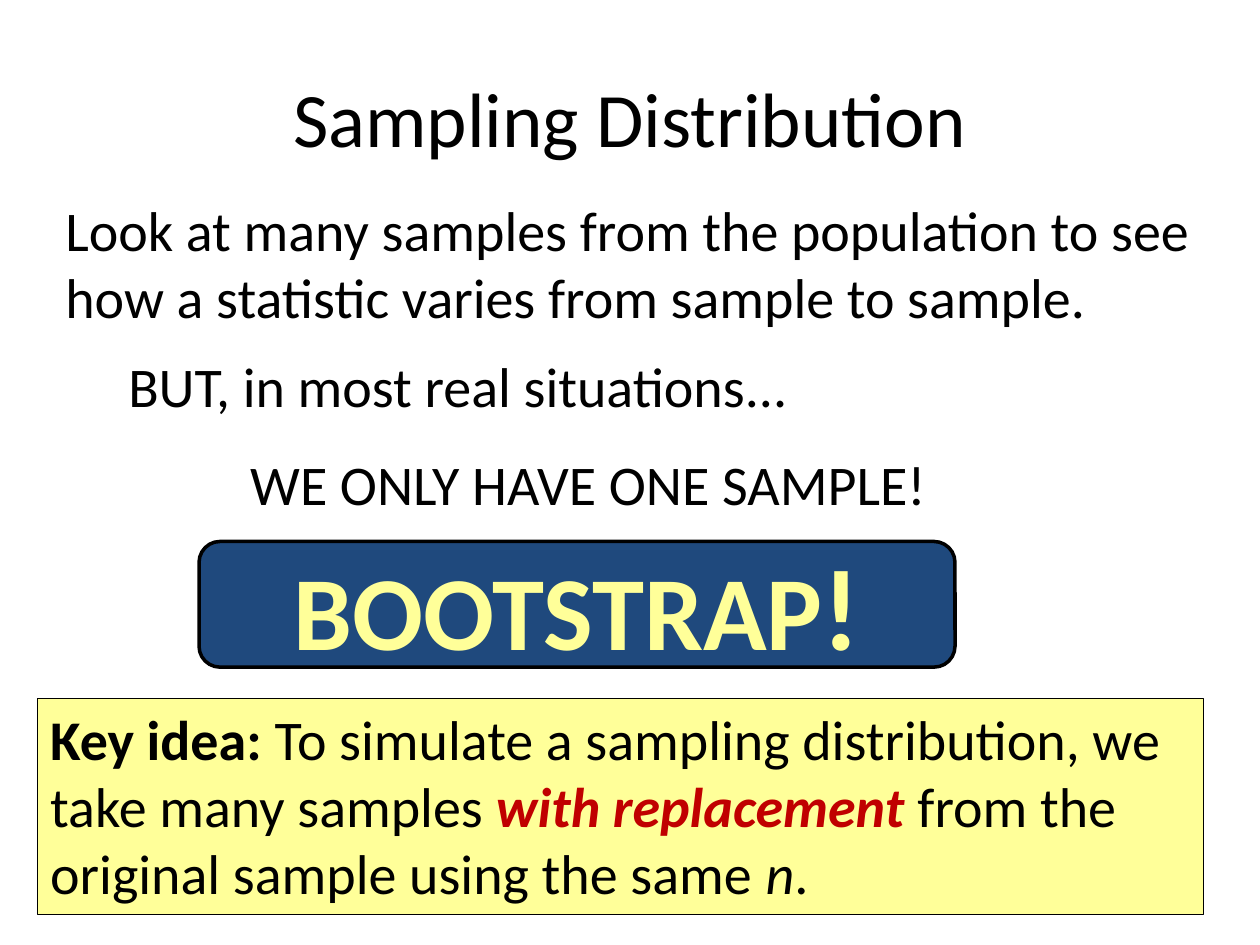
from pptx import Presentation
from pptx.dml.color import RGBColor
from pptx.enum.shapes import MSO_SHAPE
from pptx.enum.text import MSO_ANCHOR, PP_ALIGN
from pptx.util import Inches, Pt

LEFT, CENTER = PP_ALIGN.LEFT, PP_ALIGN.CENTER
TOP, MIDDLE = MSO_ANCHOR.TOP, MSO_ANCHOR.MIDDLE
RECTANGLE, ROUNDED = MSO_SHAPE.RECTANGLE, MSO_SHAPE.ROUNDED_RECTANGLE

WIDTH, HEIGHT = Inches(10), Inches(7.5)
TITLE_ONLY = 5

THEME = {
    "font": "Calibri",
    "ink": RGBColor.from_string("000000"),
    "navy": RGBColor.from_string("1F497D"),
    "yellow": RGBColor.from_string("FFFF99"),
    "red": RGBColor.from_string("C00000"),
    "title": Pt(44),
    "body": Pt(32),
    "banner": Pt(60),
    "exclamation": Pt(66),
}

# Content: a paragraph is (alignment, space before, runs); a run is (text, format)
TITLE = [(CENTER, 0, [("Sampling Distribution", {})])]
STATEMENT = [(LEFT, 0, [("Look at many samples from the population to see how "
                         "a statistic varies from sample to sample.", {})])]
PROBLEM = [
    (LEFT, 0, [("BUT, in most real situations...", {})]),
    (CENTER, 18, [("WE ONLY HAVE ONE SAMPLE!", {})]),
]
BANNER = [(CENTER, 0, [("BOOTSTRAP", {}), ("!", {"size": THEME["exclamation"]})])]
KEY_IDEA = [(LEFT, 0, [
    ("Key idea: ", {"bold": True}),
    ("To simulate a sampling distribution, we take many samples ", {}),
    ("with replacement ", {"bold": True, "italic": True, "color": THEME["red"]}),
    ("from the original sample using the same ", {}),
    ("n", {"italic": True}),
    (".", {}),
])]

# Places as shares of the slide: left, top, width, height
TITLE_AREA = (0.05, 0.04, 0.9, 1 / 6)
STATEMENT_AREA = (0.042, 0.2, 0.917, 0.157)
PROBLEM_AREA = (0.092, 0.365, 0.75, 0.19)
BANNER_AREA = (0.158, 0.573, 0.6, 0.133)
KEY_IDEA_AREA = (0.03, 0.739, 0.925, 0.229)


def place(area):
    left, top, width, height = area
    return (round(left * WIDTH), round(top * HEIGHT),
            round(width * WIDTH), round(height * HEIGHT))


def write(shape, paragraphs, size="body", color="ink", anchor=TOP, bold=False):
    frame = shape.text_frame
    frame.word_wrap = True
    frame.vertical_anchor = anchor
    for index, (alignment, space, runs) in enumerate(paragraphs):
        paragraph = frame.add_paragraph() if index else frame.paragraphs[0]
        paragraph.alignment = alignment
        if space:
            paragraph.space_before = Pt(space)
        font = paragraph.font
        font.name, font.size, font.bold = THEME["font"], THEME[size], bold
        font.color.rgb = THEME[color]
        for text, style in runs:
            run = paragraph.add_run()
            run.text = text
            for key, value in style.items():
                if key == "color":
                    run.font.color.rgb = value
                else:
                    setattr(run.font, key, value)


def add_text(slide, area, paragraphs):
    write(slide.shapes.add_textbox(*place(area)), paragraphs)


def add_panel(slide, kind, area, fill, line_width, paragraphs, **style):
    panel = slide.shapes.add_shape(kind, *place(area))
    panel.shadow.inherit = False
    panel.fill.solid()
    panel.fill.fore_color.rgb = THEME[fill]
    panel.line.color.rgb = THEME["ink"]
    panel.line.width = Pt(line_width)
    write(panel, paragraphs, **style)


def main():
    presentation = Presentation()
    presentation.slide_width, presentation.slide_height = WIDTH, HEIGHT
    slide = presentation.slides.add_slide(presentation.slide_layouts[TITLE_ONLY])

    # Title
    title = slide.shapes.title
    title.left, title.top, title.width, title.height = place(TITLE_AREA)
    write(title, TITLE, size="title", anchor=MIDDLE)

    # Argument
    add_text(slide, STATEMENT_AREA, STATEMENT)
    add_text(slide, PROBLEM_AREA, PROBLEM)

    # Answer and key idea
    add_panel(slide, ROUNDED, BANNER_AREA, "navy", 2, BANNER,
              size="banner", color="yellow", anchor=MIDDLE, bold=True)
    add_panel(slide, RECTANGLE, KEY_IDEA_AREA, "yellow", 0.75, KEY_IDEA)

    presentation.save("out.pptx")


if __name__ == "__main__":
    main()
